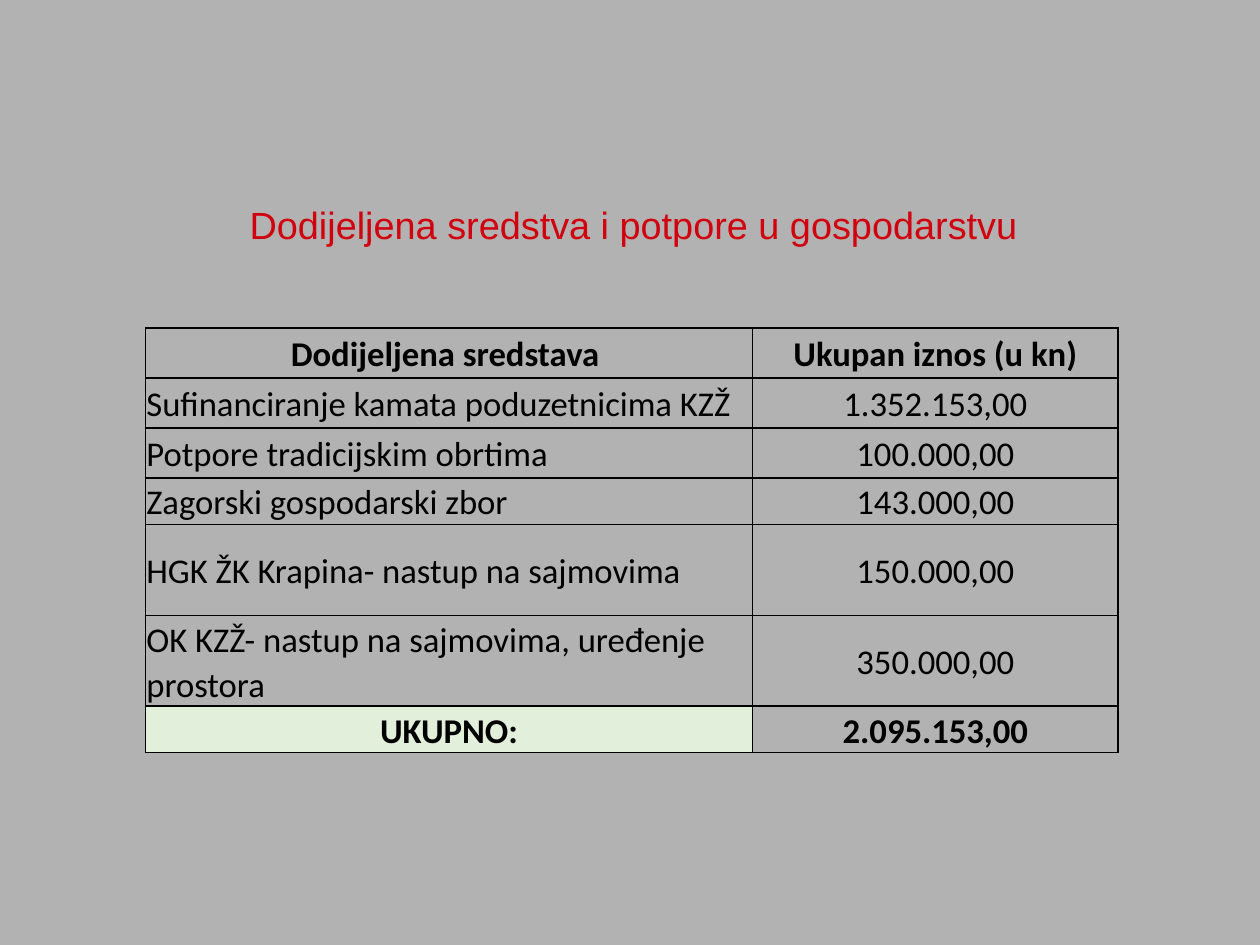
from lxml.etree import SubElement
from pptx import Presentation
from pptx.dml.color import RGBColor
from pptx.enum.text import MSO_ANCHOR, PP_ALIGN
from pptx.oxml.ns import qn
from pptx.util import Inches, Pt


def color(hex_text):
    return RGBColor.from_string(hex_text)


def write(frame, text, font="Calibri", size=22, ink="000000", bold=False,
          align=PP_ALIGN.CENTER, spacing=1.0):
    frame.word_wrap = True
    para = frame.paragraphs[0]
    para.alignment = align
    para.line_spacing = spacing
    span = para.add_run()
    span.text = text
    span.font.name = font
    span.font.size = Pt(size)
    span.font.bold = bold
    span.font.color.rgb = color(ink)


# Deck and page, in the proportion 4:3
deck = Presentation()
deck.slide_width = Inches(11.1)
deck.slide_height = Inches(11.1 * 3 / 4)
page = deck.slides.add_slide(deck.slide_layouts[6])
page.background.fill.solid()
page.background.fill.fore_color.rgb = color("B2B2B2")

# Title, lifted a little by a deeper bottom margin
box = page.shapes.add_textbox(Inches(1.22), Inches(1.73), Inches(8.72), Inches(0.66))
box.text_frame.vertical_anchor = MSO_ANCHOR.MIDDLE
box.text_frame.margin_bottom = Inches(0.21)
write(box.text_frame, "Dodijeljena sredstva i potpore u gospodarstvu",
      font="Arial", size=24, ink="D1000E")

# Table contents: purpose, amount, row height
rows = [
    ("Dodijeljena sredstava ", "Ukupan iznos (u kn)", 0.44),
    ("Sufinanciranje kamata poduzetnicima KZŽ", "1.352.153,00", 0.44),
    ("Potpore tradicijskim obrtima", "100.000,00", 0.44),
    ("Zagorski gospodarski zbor", "143.000,00", 0.41),
    ("HGK ŽK Krapina- nastup na sajmovima", "150.000,00", 0.8),
    ("OK KZŽ- nastup na sajmovima, uređenje prostora", "350.000,00", 0.8),
    ("UKUPNO:", "2.095.153,00", 0.41),
]
column_widths = [5.35, 3.22]
last_row = len(rows) - 1

# Table grid
table = page.shapes.add_table(
    len(rows), len(column_widths), Inches(1.28), Inches(2.89),
    Inches(sum(column_widths)), Inches(sum(row[-1] for row in rows))).table
table.first_row = table.horz_banding = False
for column, width in zip(table.columns, column_widths):
    column.width = Inches(width)

# Table cells
for row_index, (*texts, height) in enumerate(rows):
    table.rows[row_index].height = Inches(height)
    strong = row_index in (0, last_row)
    for column_index, text in enumerate(texts):
        cell = table.cell(row_index, column_index)
        cell.vertical_anchor = MSO_ANCHOR.MIDDLE
        cell.margin_left = cell.margin_right = cell.margin_top = Inches(0.01)
        cell.margin_bottom = 0
        label = column_index == 0 and not strong
        write(cell.text_frame, text, bold=strong, spacing=1.07,
              align=PP_ALIGN.LEFT if label else PP_ALIGN.CENTER)

        # Borders come before the fill in the cell properties
        properties = cell._tc.get_or_add_tcPr()
        for side in ("a:lnL", "a:lnR", "a:lnT", "a:lnB"):
            line = SubElement(properties, qn(side), w=str(Pt(1)))
            fill = SubElement(line, qn("a:solidFill"))
            SubElement(fill, qn("a:srgbClr"), val="000000")
        if row_index == last_row and column_index == 0:
            cell.fill.solid()
            cell.fill.fore_color.rgb = color("E2EFDA")
        else:
            cell.fill.background()

deck.save("out.pptx")
